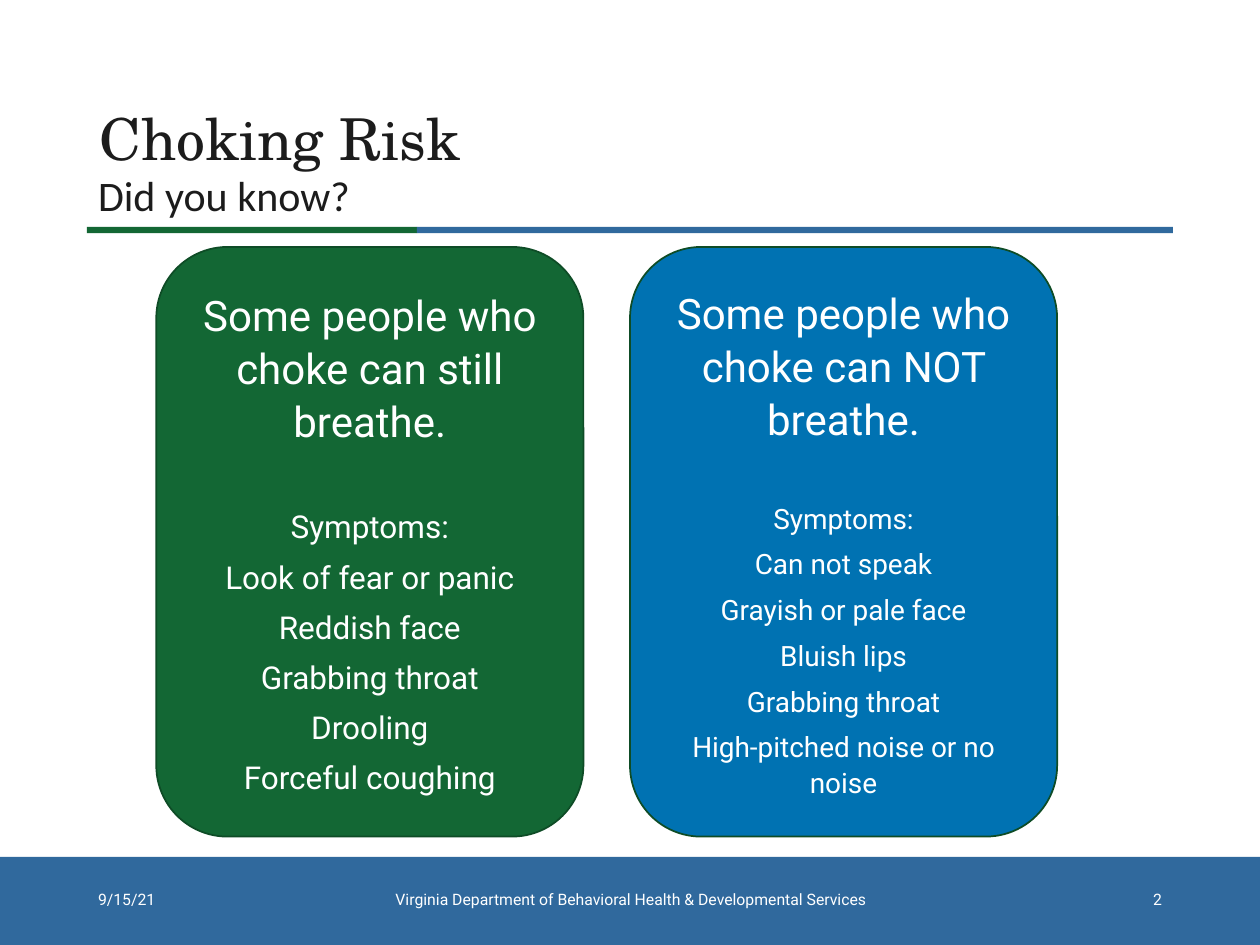
from dataclasses import dataclass

import pptx
import pptx.dml.color
import pptx.enum.shapes
import pptx.enum.text
import pptx.util

Inches = pptx.util.Inches
Pt = pptx.util.Pt
Align = pptx.enum.text.PP_ALIGN
Anchor = pptx.enum.text.MSO_ANCHOR
ShapeType = pptx.enum.shapes.MSO_SHAPE

GREEN = "136734"
DARK_GREEN = "0E4C26"
STEEL_BLUE = "30699D"
BRIGHT_BLUE = "0072B2"
INK = "1C1C1C"
WHITE = "FFFFFF"


@dataclass
class Box:
    left: float
    top: float
    width: float
    height: float

    def lengths(self) -> tuple:
        return tuple(Inches(n) for n in (self.left, self.top, self.width, self.height))


@dataclass
class Bar:
    box: Box
    color: str


@dataclass
class Label:
    text: str
    box: Box
    size: float
    font_name: str
    color: str
    alignment: Align = Align.LEFT
    anchor: Anchor = Anchor.MIDDLE
    line_spacing: float = 0.9
    wrap: bool = True


@dataclass
class SymptomCard:
    left: float
    color: str
    heading: str
    symptoms: list[str]
    size: float
    heading_gap: float


def rgb(color: str) -> pptx.dml.color.RGBColor:
    return pptx.dml.color.RGBColor.from_string(color)


def style_paragraph(paragraph, text: str, size: float, font_name: str, color: str,
                    alignment: Align, line_spacing: float) -> None:
    paragraph.text = text
    paragraph.alignment = alignment
    paragraph.line_spacing = line_spacing
    paragraph.font.size = Pt(size)
    paragraph.font.name = font_name
    paragraph.font.color.rgb = rgb(color)


def add_filled_shape(slide, shape_type: ShapeType, box: Box, color: str):
    shape = slide.shapes.add_shape(shape_type, *box.lengths())
    shape.shadow.inherit = False
    shape.fill.solid()
    shape.fill.fore_color.rgb = rgb(color)
    shape.line.fill.background()
    return shape


def add_bar(slide, bar: Bar) -> None:
    add_filled_shape(slide, ShapeType.RECTANGLE, bar.box, bar.color)


def add_label(slide, label: Label) -> None:
    text_frame = slide.shapes.add_textbox(*label.box.lengths()).text_frame
    text_frame.word_wrap = label.wrap
    text_frame.vertical_anchor = label.anchor
    style_paragraph(text_frame.paragraphs[0], label.text, label.size, label.font_name,
                    label.color, label.alignment, label.line_spacing)


def add_symptom_card(slide, card: SymptomCard) -> None:
    shape = add_filled_shape(slide, ShapeType.ROUNDED_RECTANGLE,
                             Box(card.left, 1.96, 3.39, 4.68), card.color)
    shape.line.color.rgb = rgb(DARK_GREEN)
    shape.line.width = Pt(1)
    text_frame = shape.text_frame
    text_frame.word_wrap = True
    text_frame.vertical_anchor = Anchor.MIDDLE
    style_paragraph(text_frame.paragraphs[0], card.heading, 24, "Roboto", WHITE,
                    Align.CENTER, 1.05)
    for index, text in enumerate(["Symptoms:", *card.symptoms]):
        paragraph = text_frame.add_paragraph()
        style_paragraph(paragraph, text, card.size, "Roboto", WHITE, Align.CENTER, 1.05)
        paragraph.space_before = Pt(6 if index else card.heading_gap)


def footer_label(text: str, left: float, width: float, alignment: Align) -> Label:
    return Label(text, Box(left, 6.94, width, 0.41), 9, "Roboto", WHITE, alignment)


BARS = [
    Bar(Box(0, 6.8, 10, 0.7), STEEL_BLUE),
    Bar(Box(0.69, 1.8, 2.62, 0.05), GREEN),
    Bar(Box(3.31, 1.8, 6, 0.05), STEEL_BLUE),
]

LABELS = [
    Label("Choking Risk", Box(0.69, 0.4, 8.62, 1.45), 33, "TeX Gyre Schola", INK),
    Label("Did you know?", Box(0.68, 1.3, 2.22, 0.5), 24, "Calibri", INK,
          anchor=Anchor.TOP, line_spacing=1.0, wrap=False),
    footer_label("9/15/21", 0.68, 2.26, Align.LEFT),
    footer_label("Virginia Department of Behavioral Health & Developmental Services",
                 2.94, 4.13, Align.CENTER),
    footer_label("2", 7.06, 2.26, Align.RIGHT),
]

CARDS = [
    SymptomCard(1.24, GREEN, "Some people who choke can still breathe.",
                ["Look of fear or panic", "Reddish face", "Grabbing throat",
                 "Drooling", "Forceful coughing"], 18, 34),
    SymptomCard(5, BRIGHT_BLUE, "Some people who choke can NOT breathe.",
                ["Can not speak", "Grayish or pale face", "Bluish lips",
                 "Grabbing throat", "High-pitched noise or no noise"], 16, 32),
]


def main() -> None:
    presentation = pptx.Presentation()
    presentation.slide_width = Inches(10)
    presentation.slide_height = Inches(7.5)
    slide = presentation.slides.add_slide(presentation.slide_layouts[6])
    for bar in BARS:
        add_bar(slide, bar)
    for card in CARDS:
        add_symptom_card(slide, card)
    for label in LABELS:
        add_label(slide, label)
    presentation.save("out.pptx")


if __name__ == "__main__":
    main()
